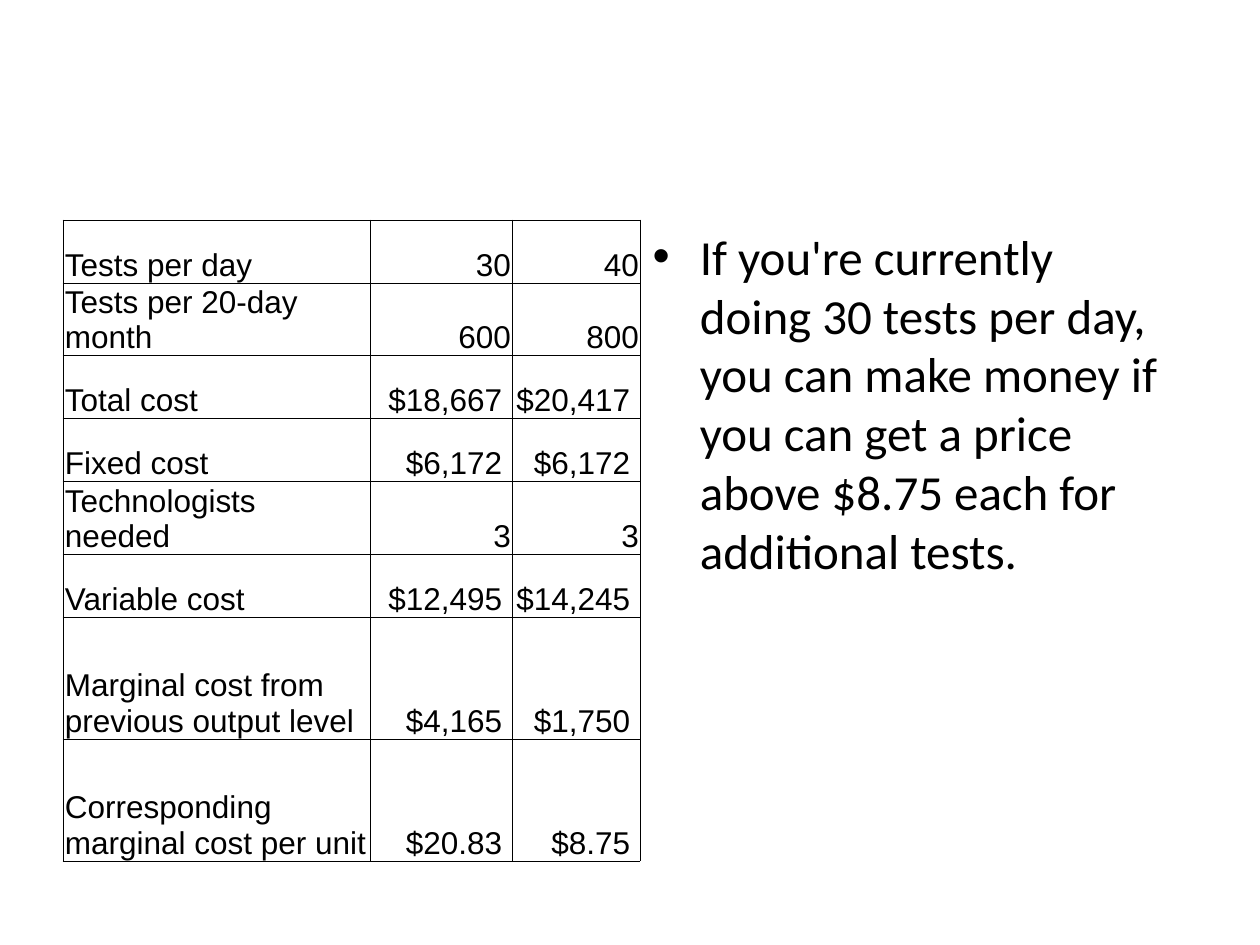
from lxml.etree import SubElement
from pptx import Presentation
from pptx.dml.color import RGBColor
from pptx.enum.text import MSO_ANCHOR as Anchor, PP_ALIGN as Align
from pptx.oxml.ns import qn
from pptx.util import Emu, Pt

PX = 914400 // 126
BLACK = "000000"
COLUMN_WIDTHS = [307, 142, 128]
ROW_HEIGHTS = [63] * 6 + [122] * 2
COST_ROWS = [
    ("Tests per day", "30", "40"),
    ("Tests per 20-day month", "600", "800"),
    ("Total cost", "$18,667 ", "$20,417 "),
    ("Fixed cost", "$6,172 ", "$6,172 "),
    ("Technologists needed", "3", "3"),
    ("Variable cost", "$12,495 ", "$14,245 "),
    ("Marginal cost from previous output level", "$4,165 ", "$1,750 "),
    ("Corresponding marginal cost per unit", "$20.83 ", "$8.75 "),
]
CONCLUSION = (
    "If you're currently  doing 30 tests per day, you can make money if "
    "you can get a price above $8.75 each for additional tests."
)


def px(length):
    return Emu(length * PX)


def color(value):
    return RGBColor.from_string(value)


def style_font(paragraph, name, size):
    paragraph.font.name = name
    paragraph.font.size = Pt(size)
    paragraph.font.color.rgb = color(BLACK)


def add_borders(cell):
    properties = cell._tc.get_or_add_tcPr()
    for side in ("a:lnL", "a:lnR", "a:lnT", "a:lnB"):
        line = SubElement(properties, qn(side), w=str(Pt(0.5)))
        fill = SubElement(line, qn("a:solidFill"))
        SubElement(fill, qn("a:srgbClr"), val=BLACK)


def fill_cell(cell, text, align):
    cell.margin_left = cell.margin_top = px(2)
    cell.margin_right = px(1)
    cell.margin_bottom = 0
    cell.vertical_anchor = Anchor.BOTTOM
    add_borders(cell)
    cell.fill.background()
    cell.text = text
    paragraph = cell.text_frame.paragraphs[0]
    paragraph.alignment = align
    style_font(paragraph, "Arial", 18)


def add_cost_table(slide, left, top):
    frame = slide.shapes.add_table(
        len(COST_ROWS), len(COLUMN_WIDTHS), px(left), px(top),
        px(sum(COLUMN_WIDTHS)), px(sum(ROW_HEIGHTS)))
    table = frame.table
    table.first_row = table.horz_banding = False
    for column, width in zip(table.columns, COLUMN_WIDTHS):
        column.width = px(width)
    for row, height, texts in zip(table.rows, ROW_HEIGHTS, COST_ROWS):
        row.height = px(height)
        for index, (cell, text) in enumerate(zip(row.cells, texts)):
            fill_cell(cell, text, Align.RIGHT if index else Align.LEFT)


def place_conclusion(body, left, top, width, height):
    body.left, body.top = px(left), px(top)
    body.width, body.height = px(width), px(height)
    body.text_frame.text = CONCLUSION
    style_font(body.text_frame.paragraphs[0], "Calibri", 28)


def main():
    presentation = Presentation()
    presentation.slide_width = px(1260)
    presentation.slide_height = px(945)
    slide = presentation.slides.add_slide(presentation.slide_layouts[1])
    title = slide.shapes.title.element
    title.getparent().remove(title)
    add_cost_table(slide, 63, 220)
    place_conclusion(slide.placeholders[1], 640, 220, 557, 624)
    presentation.save("out.pptx")


if __name__ == "__main__":
    main()
